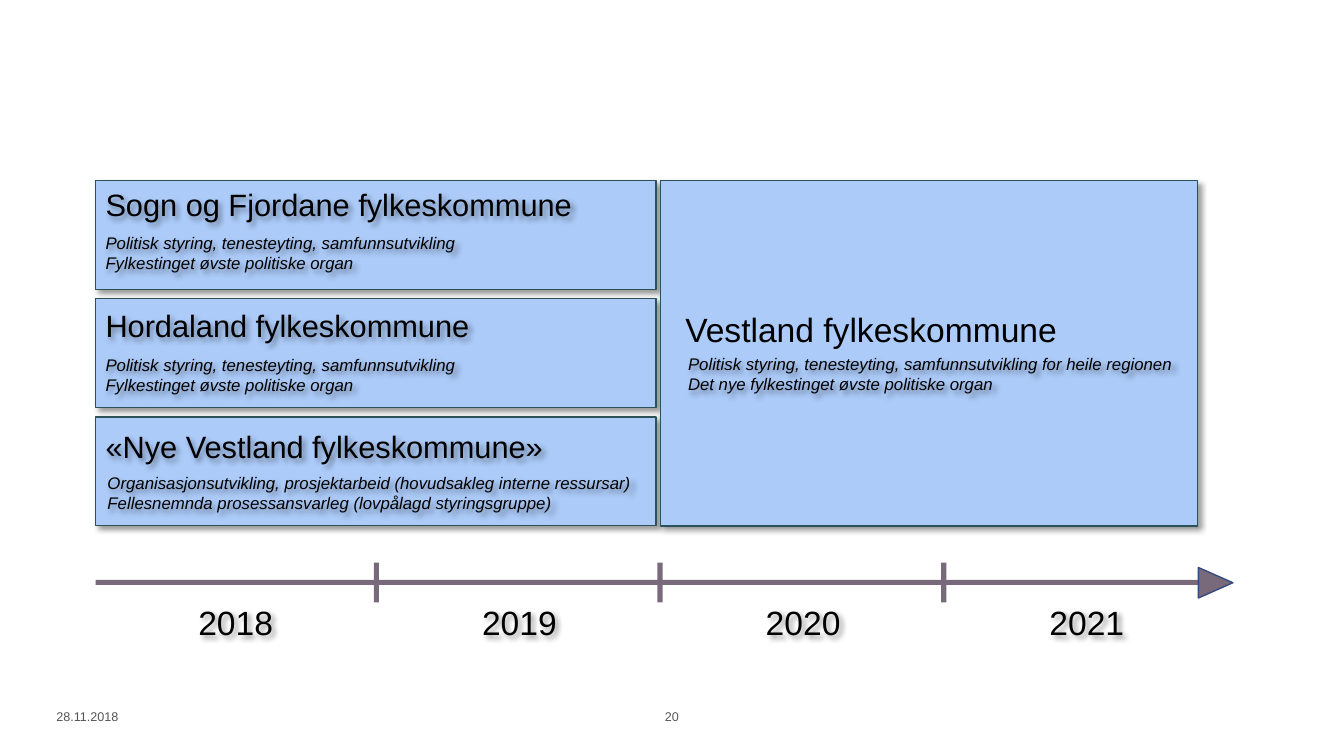
import pptx
import pptx.util
import pptx.dml.color
import pptx.enum.shapes
import pptx.enum.text
from lxml import etree
from pptx.util import Cm

HUES = {
    "box": "ACCBF9",
    "edge": "2B5259",
    "axis": "78697B",
    "tip": "374B7F",
    "text": "000000",
    "foot": "555555",
}
KIND = pptx.enum.shapes.MSO_SHAPE
ALIGN = pptx.enum.text.PP_ALIGN
ANCHOR = pptx.enum.text.MSO_ANCHOR
LEFT = 2.41
TOP = 4.55
WIDE = 14.12
YEAR = 7.15

BODY = "Politisk styring, tenesteyting, samfunnsutvikling"
COUNTY = [BODY, "Fylkestinget øvste politiske organ"]
UNITS = [
    ("Sogn og Fjordane fylkeskommune", COUNTY, LEFT, 5.74),
    ("Hordaland fylkeskommune", COUNTY, LEFT, 8.81),
    ("«Nye Vestland fylkeskommune»",
     ["Organisasjonsutvikling, prosjektarbeid (hovudsakleg interne ressursar)",
      "Fellesnemnda prosessansvarleg (lovpålagd styringsgruppe)"], 2.46, 11.79),
]
MERGED = [BODY + " for heile regionen", "Det nye fylkestinget øvste politiske organ"]


def color(name):
    return pptx.dml.color.RGBColor.from_string(HUES[name])


def shade(shape):
    shape.shadow.inherit = False
    tag = "{http://schemas.openxmlformats.org/drawingml/2006/main}"
    effect = shape._element.spPr.find(tag + "effectLst")
    outer = etree.SubElement(effect, tag + "outerShdw", blurRad="50800",
                             dist="38100", dir="2700000", algn="tl", rotWithShape="0")
    black = etree.SubElement(outer, tag + "srgbClr", val="000000")
    etree.SubElement(black, tag + "alpha", val="40000")


def add_block(slide, place, fill, edge=None, kind=KIND.RECTANGLE):
    shape = slide.shapes.add_shape(kind, *map(Cm, place))
    shape.shadow.inherit = False
    shape.fill.solid()
    shape.fill.fore_color.rgb = color(fill)
    if edge:
        shape.line.color.rgb = color(edge)
        shape.line.width = pptx.util.Pt(1)
    else:
        shape.line.fill.background()
    return shape


def add_panel(slide, *place):
    shade(add_block(slide, place, "box", "edge"))


def write(frame, lines, size, hue="text", slant=False, align=ALIGN.LEFT):
    frame.word_wrap = True
    frame.text = "\n".join(lines)
    for para in frame.paragraphs:
        para.alignment = align
        font = para.runs[0].font
        font.name = "Arial"
        font.size = pptx.util.Pt(size)
        font.italic = slant
        font.color.rgb = color(hue)


def add_label(slide, place, lines, size, **style):
    box = slide.shapes.add_textbox(*map(Cm, place))
    write(box.text_frame, lines, size, **style)
    return box


def add_foot(slide, place, text, align):
    frame = add_label(slide, place, [text], 9, hue="foot", align=align).text_frame
    frame.margin_left = frame.margin_right = 0
    frame.margin_top = frame.margin_bottom = 0


def add_units(slide):
    for row in range(len(UNITS)):
        add_panel(slide, LEFT, TOP + 2.98 * row, WIDE, 2.74)
    for row, (name, tasks, left, top) in enumerate(UNITS):
        shade(add_label(slide, (LEFT, TOP + 3.05 * row, WIDE, 1.19), [name], 22))
        shade(add_label(slide, (left, top, WIDE, 1.27), tasks, 12, slant=True))


def add_merged(slide):
    add_panel(slide, 16.64, TOP, 13.54, 8.71)
    shade(add_label(slide, (17.09, 8.79, 13.09, 1.27), MERGED, 12, slant=True))
    title = add_block(slide, (17.02, 7.67, 11.56, 1.27), "box")
    write(title.text_frame, ["Vestland fylkeskommune"], 24)
    title.text_frame.vertical_anchor = ANCHOR.MIDDLE
    title.text_frame.paragraphs[0].space_after = pptx.util.Pt(3)


def add_axis(slide):
    add_block(slide, (LEFT, 14.61, 28.5, 0.13), "axis")
    for step in range(4):
        if step:
            add_block(slide, (2.27 + YEAR * step, 14.18, 0.13, 1), "axis")
        place = (LEFT + YEAR * step, 15.03, 7.06, 1.27)
        shade(add_label(slide, place, [str(2018 + step)], 24, align=ALIGN.CENTER))
    tip = add_block(slide, (30.25, 14.25, 0.77, 0.87), "axis", "tip",
                    KIND.ISOSCELES_TRIANGLE)
    tip.rotation = 90


def main():
    deck = pptx.Presentation()
    deck.slide_width = Cm(33.87)
    deck.slide_height = Cm(19.05)
    slide = deck.slides.add_slide(deck.slide_layouts[6])
    add_units(slide)
    add_merged(slide)
    add_axis(slide)
    add_foot(slide, (1.42, 17.86, 3.43, 0.56), "28.11.2018", ALIGN.LEFT)
    add_foot(slide, (16.13, 17.86, 1.6, 0.56), "20", ALIGN.CENTER)
    deck.save("out.pptx")


if __name__ == "__main__":
    main()
